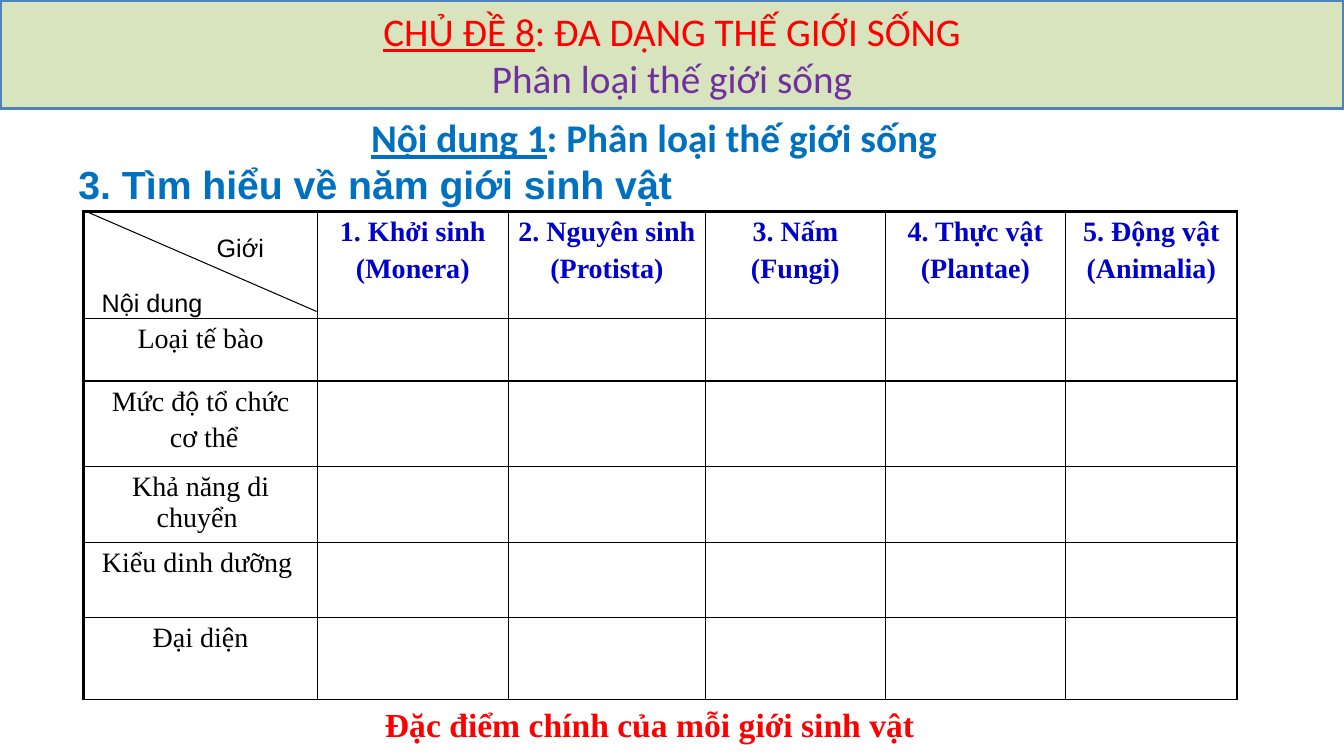
from dataclasses import dataclass

from lxml import etree
from pptx import Presentation
from pptx.dml.color import RGBColor
from pptx.enum.shapes import MSO_CONNECTOR, MSO_SHAPE
from pptx.enum.text import MSO_ANCHOR, PP_ALIGN
from pptx.oxml.ns import qn
from pptx.util import Inches, Pt

CENTER, LEFT, JUSTIFY = PP_ALIGN.CENTER, PP_ALIGN.LEFT, PP_ALIGN.JUSTIFY
MIDDLE = MSO_ANCHOR.MIDDLE
RECTANGLE, STRAIGHT = MSO_SHAPE.RECTANGLE, MSO_CONNECTOR.STRAIGHT
ARIAL, CALIBRI, TIMES = "Arial", "Calibri", "Times New Roman"
BLACK, RED, BLUE, NAVY, PURPLE = "000000", "FF0000", "0070C0", "0000CC", "7030A0"
THIN, THICK = 1, 2.25


@dataclass
class Span:
    text: str
    name: str
    size: float
    color: str
    bold: bool = False
    underline: bool = False


@dataclass
class Label:
    left: float
    top: float
    width: float
    height: float
    align: PP_ALIGN
    spans: list[Span]


LABELS = [
    Label(0.91, 2.8, 1.56, 0.4, LEFT, [Span("Nội dung", ARIAL, 18, BLACK)]),
    Label(2.05, 2.26, 1.48, 0.71, LEFT, [Span("Giới", ARIAL, 18, BLACK)]),
    Label(2.5, 6.93, 7.97, 0.51, CENTER,
          [Span("Đặc điểm chính của mỗi giới sinh vật ", TIMES, 24, RED, True)]),
    Label(2.31, 1.08, 8.35, 0.57, CENTER,
          [Span("Nội dung 1", CALIBRI, 28, BLUE, True, True),
           Span(": Phân loại thế giới sống", CALIBRI, 28, BLUE, True)]),
    Label(0.68, 1.54, 11.59, 0.57, JUSTIFY,
          [Span("3. Tìm hiểu về năm giới sinh vật", ARIAL, 28, BLUE, True)]),
]
BANNER = [
    [Span("CHỦ ĐỀ 8", CALIBRI, 28, RED, underline=True),
     Span(": ĐA DẠNG THẾ GIỚI SỐNG", CALIBRI, 28, RED)],
    [Span("Phân loại thế giới sống", CALIBRI, 28, PURPLE)],
]
KINGDOMS = [
    ["1. Khởi sinh", "(Monera)"],
    ["2. Nguyên sinh", "(Protista)"],
    ["3. Nấm", "(Fungi)"],
    ["4. Thực vật", "(Plantae)"],
    ["5. Động vật", "(Animalia)"],
]
CRITERIA = [
    ["Loại tế bào"],
    ["Mức độ tổ chức", " cơ thể"],
    ["Khả năng di chuyển "],
    ["Kiểu dinh dưỡng "],
    ["Đại diện"],
]
COLUMN_WIDTHS = [2.32, 1.89, 1.96, 1.78, 1.79, 1.7]
ROW_HEIGHTS = [1.06, 0.62, 0.85, 0.75, 0.75, 0.81]


def rgb(value: str) -> RGBColor:
    return RGBColor.from_string(value)


def write(frame, lines: list[list[Span]], align: PP_ALIGN, space: float = 0) -> None:
    for index, spans in enumerate(lines):
        para = frame.add_paragraph() if index else frame.paragraphs[0]
        para.alignment = align
        para.space_before = Pt(space)
        for span in spans:
            run = para.add_run()
            run.text = span.text
            formats = {"name": span.name, "size": Pt(span.size),
                       "bold": span.bold, "underline": span.underline}
            for key, value in formats.items():
                setattr(run.font, key, value)
            run.font.color.rgb = rgb(span.color)


def add_label(page, label: Label) -> None:
    box = page.shapes.add_textbox(Inches(label.left), Inches(label.top),
                                  Inches(label.width), Inches(label.height))
    box.text_frame.word_wrap = True
    write(box.text_frame, [label.spans], label.align)


def set_borders(cell, widths: dict[str, float]) -> None:
    properties = cell._tc.get_or_add_tcPr()
    for side, width in widths.items():
        line = etree.SubElement(properties, qn(f"a:ln{side}"), w=str(int(Pt(width))))
        fill = etree.SubElement(line, qn("a:solidFill"))
        etree.SubElement(fill, qn("a:srgbClr"), val=BLACK)


def add_kingdom_table(page) -> None:
    table = page.shapes.add_table(
        len(ROW_HEIGHTS), len(COLUMN_WIDTHS), Inches(0.83), Inches(2.1),
        Inches(sum(COLUMN_WIDTHS)), Inches(sum(ROW_HEIGHTS))).table
    table.first_row = table.horz_banding = False
    for column, width in zip(table.columns, COLUMN_WIDTHS):
        column.width = Inches(width)
    last = len(COLUMN_WIDTHS) - 1
    for r, height in enumerate(ROW_HEIGHTS):
        table.rows[r].height = Inches(height)
        for c in range(len(COLUMN_WIDTHS)):
            cell = table.cell(r, c)
            set_borders(cell, {"L": THIN if c else THICK,
                               "R": THICK if c == last else THIN,
                               "T": THIN if r else THICK, "B": THIN})
            cell.fill.background()
    for index, texts in enumerate(KINGDOMS, 1):
        lines = [[Span(text, TIMES, 20, NAVY, True)] for text in texts]
        write(table.cell(0, index).text_frame, lines, CENTER, 4)
    for index, texts in enumerate(CRITERIA, 1):
        lines = [[Span(text, TIMES, 20, BLACK)] for text in texts]
        write(table.cell(index, 0).text_frame, lines, CENTER, 4)


def add_diagonal(page) -> None:
    diagonal = page.shapes.add_connector(STRAIGHT, Inches(0.86), Inches(2.1),
                                         Inches(3.14), Inches(3.09))
    diagonal.line.color.rgb = rgb(BLACK)
    diagonal.line.width = Pt(0.75)
    etree.SubElement(diagonal._element.spPr, qn("a:effectLst"))


def add_banner(page) -> None:
    banner = page.shapes.add_shape(RECTANGLE, 0, 0, Inches(13.33), Inches(1.08))
    banner.shadow.inherit = False
    banner.fill.solid()
    banner.fill.fore_color.rgb = rgb("D7E4BD")
    banner.line.color.rgb = rgb("4F81BD")
    banner.line.width = Pt(THICK)
    banner.text_frame.word_wrap = True
    banner.text_frame.vertical_anchor = MIDDLE
    write(banner.text_frame, BANNER, CENTER)


def main() -> None:
    deck = Presentation()
    deck.slide_width, deck.slide_height = Inches(13.33), Inches(7.5)
    page = deck.slides.add_slide(deck.slide_layouts[6])
    add_kingdom_table(page)
    add_diagonal(page)
    for label in LABELS:
        add_label(page, label)
    add_banner(page)
    deck.save("out.pptx")


if __name__ == "__main__":
    main()
